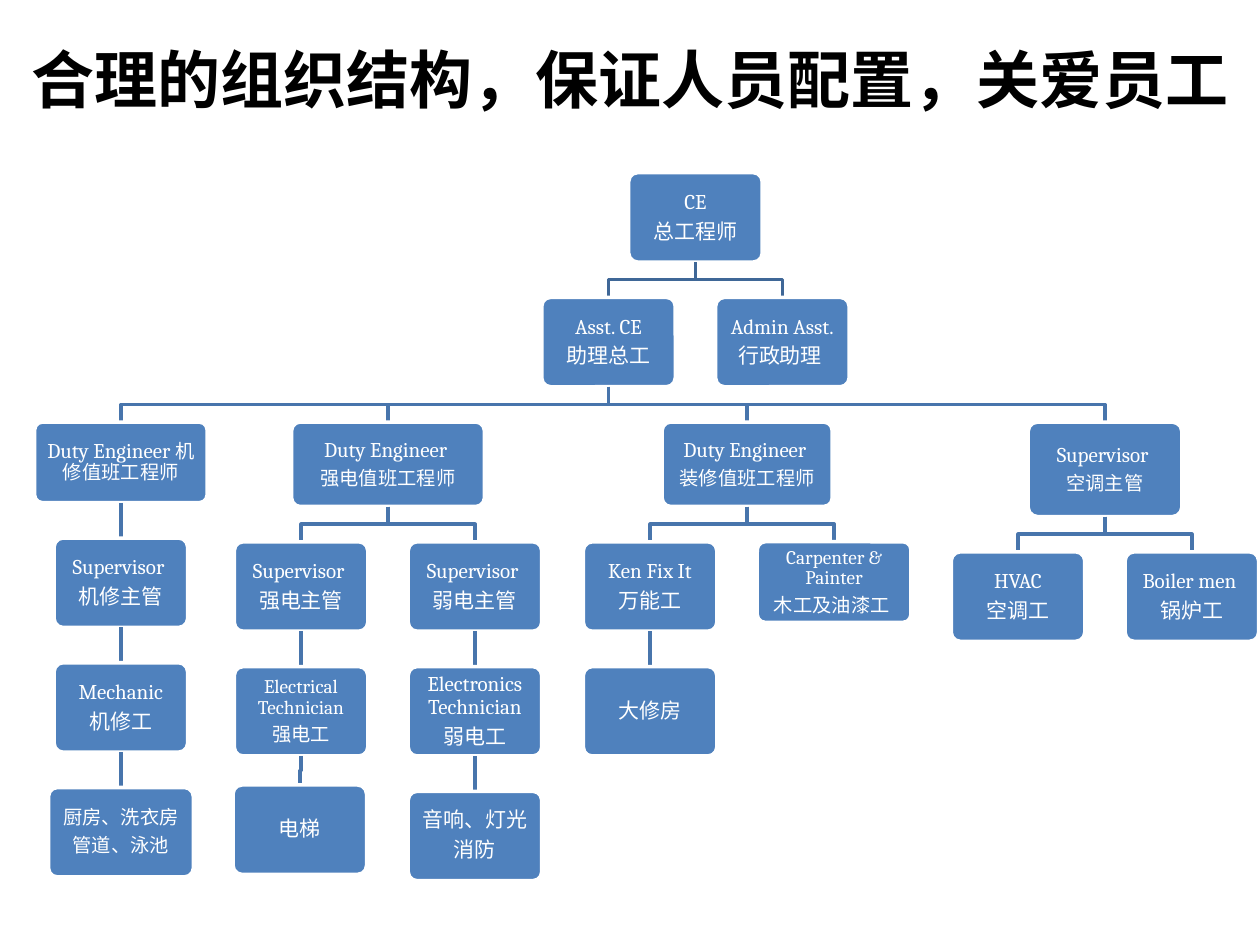
from dataclasses import dataclass, field

from lxml.etree import SubElement
from pptx import Presentation
from pptx.dml.color import RGBColor
from pptx.enum.shapes import MSO_SHAPE
from pptx.enum.text import MSO_ANCHOR, PP_ALIGN
from pptx.oxml.ns import qn
from pptx.util import Inches, Pt

BOX_FILL = "4F81BD"
WHITE = "FFFFFF"
TOP_LINE = "3F6797"
LOWER_LINE = "4875AC"
CJK_FONT = "Noto Sans CJK JP"
GAP = 0.28


@dataclass
class Post:
    """One post in the chart: centre x, text lines, their sizes and the posts below."""
    x: float
    lines: list
    below: list = field(default_factory=list)
    sizes: tuple = (12, 12)
    width: float = 1.06
    height: float = 0.71
    gap: float = GAP
    one_paragraph: bool = False


def chart():
    mechanics = Post(0.96, ["Duty Engineer ", "机修值班工程师"], [
        Post(0.96, ["Supervisor ", "机修主管"], [
            Post(0.96, ["Mechanic", "机修工"], [
                Post(0.96, ["厨房、洗衣房", "管道、泳池"], sizes=(11, 11), width=1.15)])])],
        sizes=(12, 11), width=1.37, height=0.64, one_paragraph=True)
    electrics = Post(3.08, ["Duty Engineer ", "强电值班工程师"], [
        Post(2.39, ["Supervisor ", "强电主管"], [
            Post(2.39, ["Electrical Technician", "强电工"], [
                Post(2.38, ["电梯"], gap=0.23)], sizes=(11, 11))]),
        Post(3.77, ["Supervisor ", "弱电主管"], [
            Post(3.77, ["Electronics Technician", "弱电工"], [
                Post(3.77, ["音响、灯光", "消防"])])])],
        sizes=(12, 11), width=1.53, height=0.67)
    fitting = Post(5.93, ["Duty Engineer ", "装修值班工程师"], [
        Post(5.16, ["Ken Fix It", "万能工"], [Post(5.16, ["大修房"])]),
        Post(6.62, ["Carpenter & Painter", "木工及油漆工 "],
             sizes=(11, 11), width=1.22, height=0.64)],
        sizes=(12, 11), width=1.35, height=0.67)
    air = Post(8.77, ["Supervisor ", "空调主管"], [
        Post(8.08, ["HVAC", "空调工"]),
        Post(9.46, ["Boiler men ", "锅炉工"])],
        sizes=(12, 11), width=1.22, height=0.75)
    return Post(5.52, ["CE", "总工程师"], [
        Post(4.83, ["Asst. CE", "助理总工"], [mechanics, electrics, fitting, air]),
        Post(6.21, ["Admin Asst.", "行政助理 "])])


def rgb(color):
    return RGBColor.from_string(color)


def add_run(p, text, color, **font):
    r = p.add_run()
    r.text = text
    r.font.color.rgb = rgb(color)
    for name, value in font.items():
        setattr(r.font, name, value)
    SubElement(r.font._element, qn("a:ea")).set("typeface", CJK_FONT)


def set_frame(tf, margin):
    tf.word_wrap = True
    tf.vertical_anchor = MSO_ANCHOR.MIDDLE
    for side in ("left", "right", "top", "bottom"):
        setattr(tf, f"margin_{side}", Inches(margin))


def add_title(s, text):
    tf = s.shapes.add_textbox(0, 0, Inches(10), Inches(1.25)).text_frame
    set_frame(tf, 0.05)
    p = tf.paragraphs[0]
    p.alignment = PP_ALIGN.CENTER
    add_run(p, text, "000000", size=Pt(36), bold=True, name=CJK_FONT)


def add_box(s, post, top):
    sp = s.shapes.add_shape(MSO_SHAPE.ROUNDED_RECTANGLE, Inches(post.x - post.width / 2),
                            Inches(top), Inches(post.width), Inches(post.height))
    sp.adjustments[0] = 0.1
    sp.shadow.inherit = False
    sp.fill.solid()
    sp.fill.fore_color.rgb = rgb(BOX_FILL)
    sp.line.color.rgb = rgb(WHITE)
    sp.line.width = Pt(2)
    tf = sp.text_frame
    set_frame(tf, 0.05)
    for i, (line, size) in enumerate(zip(post.lines, post.sizes)):
        new = i > 0 and not post.one_paragraph
        p = tf.add_paragraph() if new else tf.paragraphs[0]
        for name, value in {"alignment": PP_ALIGN.CENTER, "line_spacing": 0.9,
                            "space_after": Pt(4)}.items():
            setattr(p, name, value)
        add_run(p, line, WHITE, size=Pt(size), name="Cambria")


def add_branch(s, x1, y1, x2, y2, color):
    """Line down from one post to the next, with a step halfway if they are not aligned."""
    middle = (y1 + y2) / 2
    points = [(x2, y2)] if x1 == x2 else [(x1, middle), (x2, middle), (x2, y2)]
    builder = s.shapes.build_freeform(Inches(x1), Inches(y1))
    builder.add_line_segments([(Inches(x), Inches(y)) for x, y in points], close=False)
    sp = builder.convert_to_shape()
    sp.shadow.inherit = False
    sp.fill.background()
    sp.line.color.rgb = rgb(color)
    sp.line.width = Pt(2)


def add_posts(s, post, top, color=LOWER_LINE):
    add_box(s, post, top)
    bottom = top + post.height
    for child in post.below:
        add_branch(s, post.x, bottom, child.x, bottom + child.gap, color)
        add_posts(s, child, bottom + child.gap)


def main():
    prs = Presentation()
    prs.slide_width, prs.slide_height = Inches(10), Inches(7.5)
    s = prs.slides.add_slide(prs.slide_layouts[6])
    add_title(s, "合理的组织结构，保证人员配置，关爱员工")
    add_posts(s, chart(), 1.37, TOP_LINE)
    prs.save("out.pptx")


if __name__ == "__main__":
    main()
